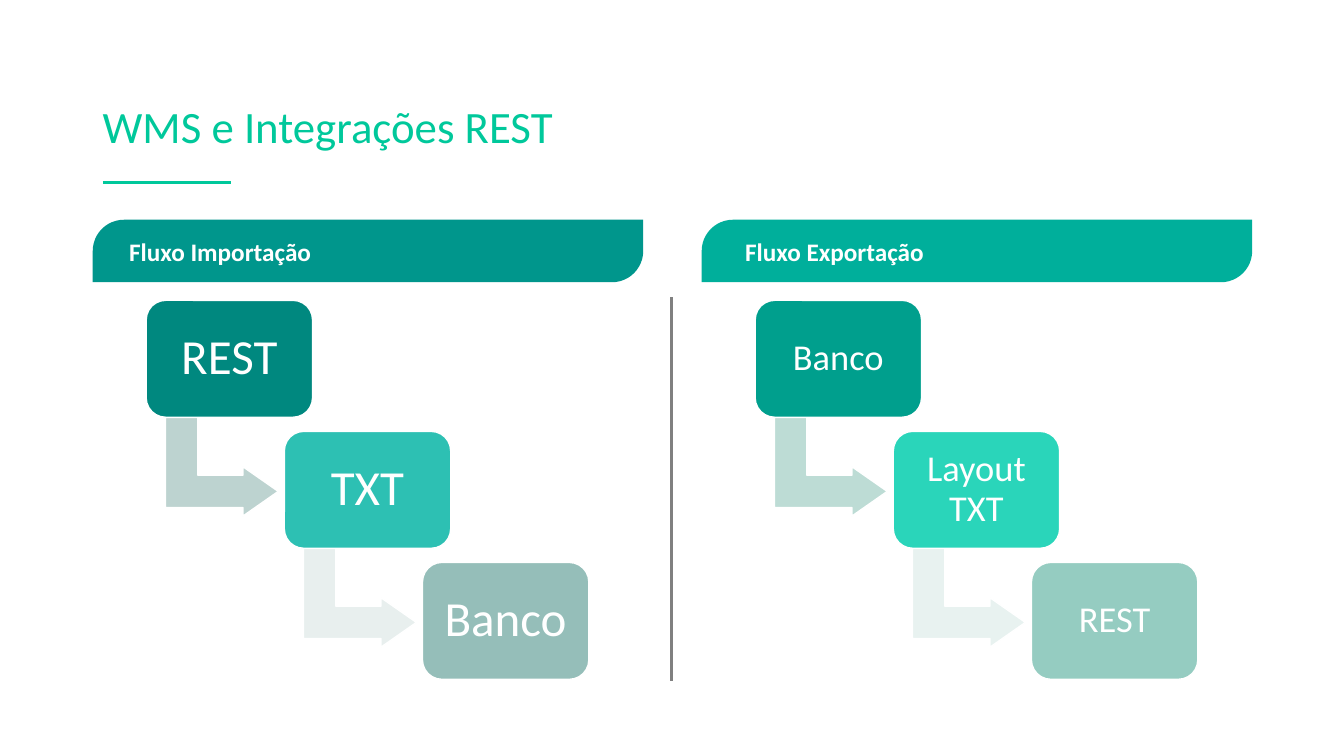
from dataclasses import dataclass

import pptx
import pptx.dml.color
import pptx.enum.shapes
import pptx.enum.text
import pptx.oxml.ns
import pptx.util
from lxml import etree

Inches = pptx.util.Inches
Pt = pptx.util.Pt
Preset = pptx.enum.shapes.MSO_SHAPE
Align = pptx.enum.text.PP_ALIGN
Anchor = pptx.enum.text.MSO_ANCHOR


@dataclass(frozen=True)
class Theme:
    font: str = "Calibri"
    accent: str = "00C89B"
    divider: str = "808080"
    white: str = "FFFFFF"
    title_size: int = 32
    heading_size: int = 18
    rule_width: float = 1.8
    outline_width: float = 1


@dataclass(frozen=True)
class Flow:
    heading: str
    banner_color: str
    heading_inset: float
    steps: tuple
    step_colors: tuple
    arrow_colors: tuple
    step_size: int
    step_inset: float


FLOWS = (
    Flow("Fluxo Importação", "00968C", 0.27, ("REST", "TXT", "Banco"),
         ("00887F", "2DC0B3", "95BEB9"), ("BDD3D0", "E8EFEE"), 35, 0.15),
    Flow("Fluxo Exportação", "00AF9B", 0.34, ("Banco", "Layout TXT", "REST"),
         ("009F8D", "2AD5BA", "95CCC1"), ("BDDCD5", "E8F2F0"), 26, 0.11),
)
FLOW_PITCH = 6.04
STEP_DX, STEP_DY = 1.37, 1.3


def rgb(color):
    return pptx.dml.color.RGBColor.from_string(color)


def write_text(shape, text, *, font, size, color, bold=False, align=Align.LEFT,
               insets=(0.1, 0.05, 0.1, 0.05), line_spacing=None):
    frame = shape.text_frame
    frame.word_wrap = True
    frame.vertical_anchor = Anchor.MIDDLE
    (frame.margin_left, frame.margin_top,
     frame.margin_right, frame.margin_bottom) = map(Inches, insets)
    paragraph = frame.paragraphs[0]
    paragraph.alignment = align
    paragraph.line_spacing = line_spacing
    run = paragraph.add_run()
    run.text = text
    run.font.name = font
    run.font.size = Pt(size)
    run.font.bold = bold
    run.font.color.rgb = rgb(color)


class FlowSlide:
    def __init__(self, slide, theme):
        self.slide = slide
        self.theme = theme

    def block(self, preset, box, fill, adjustments, outlined=False, rotation=0):
        block = self.slide.shapes.add_shape(preset, *map(Inches, box))
        block.shadow.inherit = False
        block.rotation = rotation
        for index, value in enumerate(adjustments):
            block.adjustments[index] = value
        block.fill.solid()
        block.fill.fore_color.rgb = rgb(fill)
        if outlined:
            block.line.color.rgb = rgb(self.theme.white)
            block.line.width = Pt(self.theme.outline_width)
        else:
            block.line.fill.background()
        return block

    def rule(self, start, end, color):
        rule = self.slide.shapes.add_connector(
            pptx.enum.shapes.MSO_CONNECTOR.STRAIGHT, *map(Inches, start + end))
        rule.line.color.rgb = rgb(color)
        rule.line.width = Pt(self.theme.rule_width)
        etree.SubElement(rule.element.spPr, pptx.oxml.ns.qn("a:effectLst"))

    def title(self, text):
        title = self.slide.shapes.add_textbox(*map(Inches, (0.92, 0.71, 11.5, 1.14)))
        write_text(title, text, font=self.theme.font, size=self.theme.title_size,
                   color=self.theme.accent, line_spacing=0.9)

    def banner(self, left, flow):
        banner = self.block(Preset.ROUND_2_DIAG_RECTANGLE, (left, 2.18, 5.46, 0.62),
                            flow.banner_color, (0.5, 0))
        write_text(banner, flow.heading, font=self.theme.font,
                   size=self.theme.heading_size, color=self.theme.white, bold=True,
                   insets=(flow.heading_inset, 0, 0.1, 0))

    def arrow(self, left, top, color):
        self.block(Preset.BENT_UP_ARROW, (left, top, 0.98, 1.12), color,
                   (0.328, 0.25, 0.358), outlined=True, rotation=90)

    def step(self, left, top, text, color, flow):
        step = self.block(Preset.ROUNDED_RECTANGLE, (left, top, 1.65, 1.16), color,
                          (0.167,), outlined=True)
        write_text(step, text, font=self.theme.font, size=flow.step_size,
                   color=self.theme.white, align=Align.CENTER,
                   insets=(flow.step_inset,) * 4, line_spacing=0.9)

    def staircase(self, left, top, flow):
        for index, (text, color) in enumerate(zip(flow.steps, flow.step_colors)):
            step_left = left + index * STEP_DX
            step_top = top + index * STEP_DY
            if index < len(flow.arrow_colors):
                self.arrow(step_left + 0.26, step_top + 1.09, flow.arrow_colors[index])
            self.step(step_left, step_top, text, color, flow)


def main():
    deck = pptx.Presentation()
    deck.slide_width, deck.slide_height = Inches(13.33), Inches(7.5)
    theme = Theme()
    page = FlowSlide(deck.slides.add_slide(deck.slide_layouts[6]), theme)
    page.title("WMS e Integrações REST")
    page.rule((1.02, 1.81), (2.29, 1.81), theme.accent)
    page.rule((6.66, 2.95), (6.66, 6.76), theme.divider)
    for index, flow in enumerate(FLOWS):
        offset = index * FLOW_PITCH
        page.banner(0.92 + offset, flow)
        page.staircase(1.45 + offset, 2.98, flow)
    deck.save("out.pptx")


if __name__ == "__main__":
    main()
